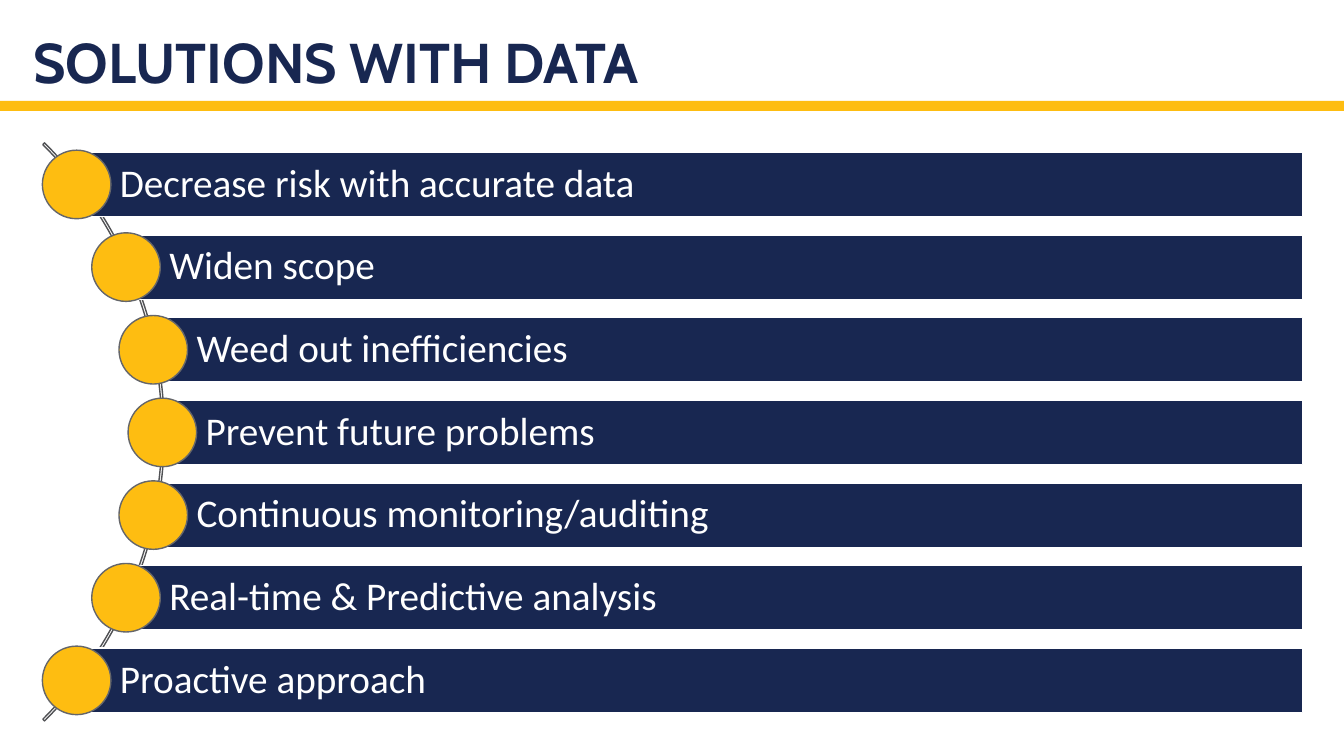
"""Build the slide of seven data solutions set along an arc."""
from pptx import Presentation
from pptx import util as u
from pptx.dml.color import RGBColor
from pptx.enum import shapes, text

INK = {"navy": "182751", "gold": "FEBD11", "white": "FFFFFF",
       "arc": "515255", "rim": "65666A"}
ITEMS = ["Decrease risk with accurate data", "Widen scope",
         "Weed out inefficiencies", "Prevent future problems",
         "Continuous monitoring/auditing",
         "Real-time & Predictive analysis", "Proactive approach"]
LEFTS = [1.61, 1.52, 1.25, 0.76]
MID, STEP, RIGHT = 3.97, 0.82, 12.92
BAR, DOT = 0.64, 0.68


def tint(name):
    return RGBColor.from_string(INK[name])


def add_form(slide, kind, box, fill=None, line=None):
    form = slide.shapes.add_shape(kind, *map(u.Inches, box))
    form.shadow.inherit = False
    if fill:
        form.fill.solid()
        form.fill.fore_color.rgb = tint(fill)
    else:
        form.fill.background()
    if line:
        form.line.color.rgb = tint(line)
        form.line.width = u.Pt(1)
    else:
        form.line.fill.background()
    return form


def set_text(form, words, font, size, color, pads, anchor, bold=False):
    frame = form.text_frame
    frame.word_wrap = True
    frame.auto_size = text.MSO_AUTO_SIZE.NONE
    frame.vertical_anchor = anchor
    (frame.margin_left, frame.margin_top,
     frame.margin_right, frame.margin_bottom) = map(u.Inches, pads)
    para = frame.paragraphs[0]
    para.alignment = text.PP_ALIGN.LEFT
    para.line_spacing = 0.9
    run = para.add_run()
    run.text = words
    run.font.name = font
    run.font.size = u.Pt(size)
    run.font.bold = bold
    run.font.color.rgb = tint(color)


def add_title(slide, words):
    title = slide.shapes.title
    title.left, title.top, title.width, title.height = map(
        u.Inches, (0.33, 0, 12.67, 1))
    set_text(title, words, "Cabin", 40, "navy", (0, 0.05, 0, 0.05),
             text.MSO_ANCHOR.BOTTOM, True)


def add_arc(slide):
    arc = add_form(slide, shapes.MSO_SHAPE.BLOCK_ARC,
                   (-6.48, 0.23, 8.11, 8.11), line="arc")
    for i, value in enumerate((189, 27, 0.003)):
        arc.adjustments[i] = value


def add_item(slide, words, left, top):
    bar = add_form(slide, shapes.MSO_SHAPE.RECTANGLE,
                   (left, top, RIGHT - left, BAR), "navy", "white")
    set_text(bar, words, "Calibri", 28, "white", (0.43, 0.08, 0.08, 0.08),
             text.MSO_ANCHOR.MIDDLE)
    add_form(slide, shapes.MSO_SHAPE.OVAL,
             (left - DOT / 2, top + (BAR - DOT) / 2, DOT, DOT), "gold", "rim")


def main():
    deck = Presentation()
    deck.slide_width, deck.slide_height = u.Inches(13.33), u.Inches(7.5)
    slide = deck.slides.add_slide(deck.slide_layouts[5])
    add_form(slide, shapes.MSO_SHAPE.RECTANGLE, (0, 1, 13.33, 0.1), "gold")
    add_title(slide, "SOLUTIONS WITH DATA")
    add_arc(slide)
    for i, words in enumerate(ITEMS):
        row = i - len(ITEMS) // 2
        add_item(slide, words, LEFTS[abs(row)], MID + row * STEP)
    deck.save("out.pptx")


if __name__ == "__main__":
    main()
